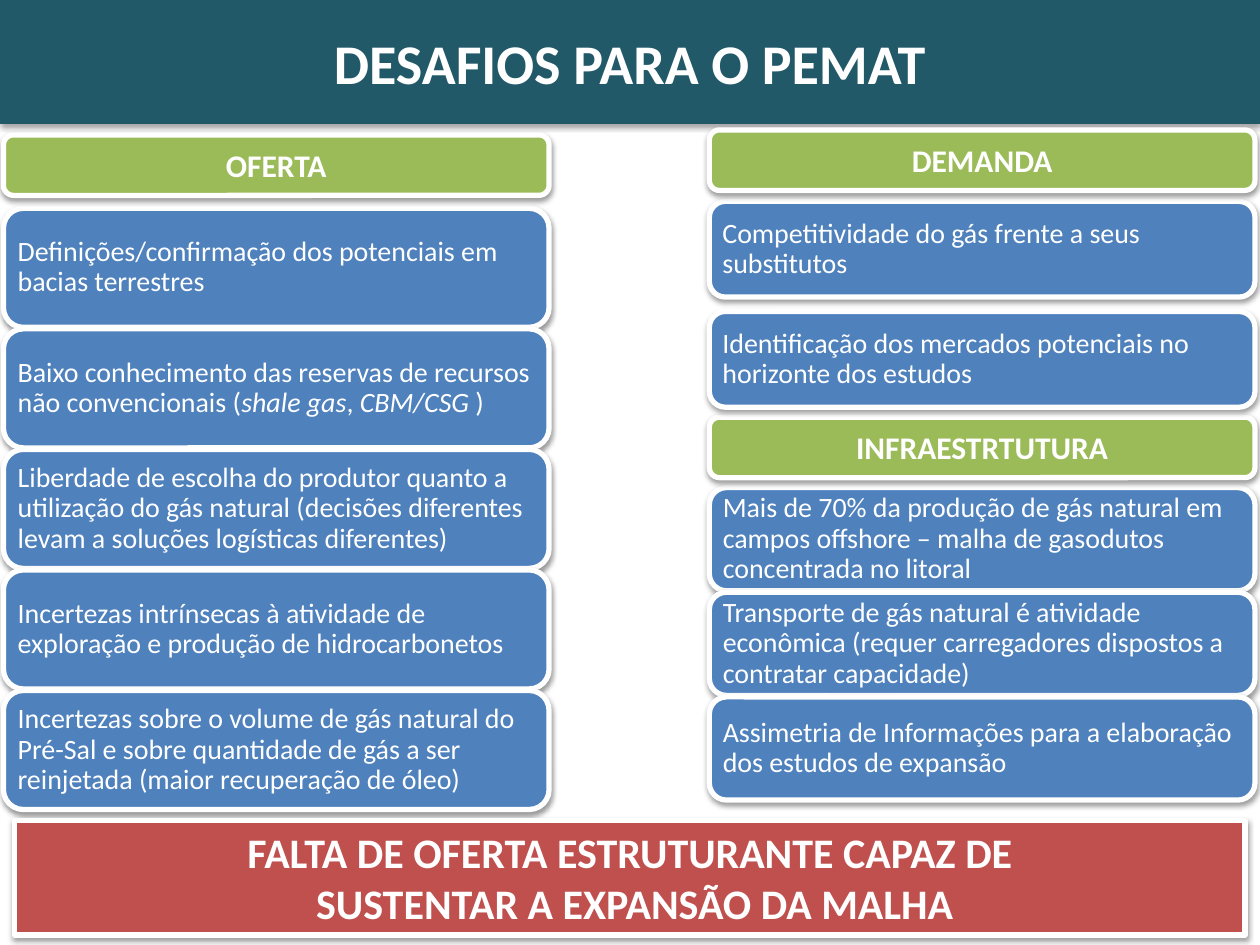
from dataclasses import dataclass

from lxml.etree import SubElement
from pptx import Presentation
from pptx.dml.color import RGBColor
from pptx.enum.shapes import MSO_SHAPE
from pptx.enum.text import MSO_ANCHOR, PP_ALIGN
from pptx.oxml.ns import qn
from pptx.util import Cm, Pt


@dataclass(frozen=True)
class Theme:
    font: str = "Calibri"
    white: str = "FFFFFF"
    teal: str = "215968"
    green: str = "9BBB59"
    blue: str = "4F81BD"
    red: str = "C0504D"
    shadow: str = "000000"
    title_size: int = 32
    conclusion_size: int = 24
    heading_size: int = 18
    card_size: int = 16
    border: int = 3


class SlideBuilder:
    def __init__(self, slide, theme):
        self.slide = slide
        self.theme = theme

    def _box(self, kind, left, top, width, height, fill, border=True):
        box = self.slide.shapes.add_shape(
            kind, Cm(left), Cm(top), Cm(width), Cm(height))
        box.fill.solid()
        box.fill.fore_color.rgb = RGBColor.from_string(fill)
        if border:
            box.line.color.rgb = RGBColor.from_string(self.theme.white)
            box.line.width = Pt(self.theme.border)
        else:
            box.line.fill.background()
        self._drop_shadow(box, 1.6 if border else 1.8, 38 if border else 35)
        box.text_frame.word_wrap = True
        return box

    def _drop_shadow(self, box, distance, opacity):
        box.shadow.inherit = False
        effects = box._element.spPr.find(qn("a:effectLst"))
        outer = SubElement(effects, qn("a:outerShdw"), blurRad=str(Pt(3.1)),
                           dist=str(Pt(distance)), dir="5400000", rotWithShape="0")
        color = SubElement(outer, qn("a:srgbClr"), val=self.theme.shadow)
        SubElement(color, qn("a:alpha"), val=str(opacity * 1000))

    def _format(self, frame, size, bold=False, align=PP_ALIGN.CENTER):
        for paragraph in frame.paragraphs:
            paragraph.alignment = align
            for run in paragraph.runs:
                run.font.name = self.theme.font
                run.font.size = Pt(size)
                run.font.bold = bold
                run.font.color.rgb = RGBColor.from_string(self.theme.white)

    def title(self, text):
        band = self._box(MSO_SHAPE.RECTANGLE, 0, 0, 25.4, 2.5,
                         self.theme.teal, border=False)
        band.text_frame.text = text
        self._format(band.text_frame, self.theme.title_size, bold=True)

    def heading(self, text, left, top, width):
        label = self._box(MSO_SHAPE.ROUNDED_RECTANGLE, left, top, width, 1.22,
                          self.theme.green)
        label.text_frame.text = text
        self._format(label.text_frame, self.theme.heading_size, bold=True)

    def card(self, text, left, top, width, height):
        """Text between asterisks is set in italics."""
        card = self._box(MSO_SHAPE.ROUNDED_RECTANGLE, left, top, width, height,
                         self.theme.blue)
        frame = card.text_frame
        frame.margin_left = frame.margin_right = Cm(0.17)
        frame.margin_top = frame.margin_bottom = Cm(0.17)
        paragraph = frame.paragraphs[0]
        paragraph.line_spacing = 0.9
        for index, part in enumerate(text.split("*")):
            run = paragraph.add_run()
            run.text = part
            run.font.italic = index % 2 == 1
        self._format(frame, self.theme.card_size, align=PP_ALIGN.LEFT)

    def section(self, name, left, heading_top, first_top, height, gap, challenges):
        width = 11
        for index, challenge in enumerate(challenges):
            self.card(challenge, left, first_top + index * (height + gap),
                      width, height)
        self.heading(name, left, heading_top, width)

    def conclusion(self, text):
        banner = self._box(MSO_SHAPE.RECTANGLE, 0.3, 16.54, 24.8, 2.31,
                           self.theme.red)
        banner.text_frame.vertical_anchor = MSO_ANCHOR.TOP
        banner.text_frame.text = text
        self._format(banner.text_frame, self.theme.conclusion_size, bold=True)


LEFT_COLUMN, RIGHT_COLUMN = 0.07, 14.3

SUPPLY = [
    "Definições/confirmação dos potenciais em bacias terrestres",
    "Baixo conhecimento das reservas de recursos não convencionais "
    "(*shale gas*, *CBM/CSG* )",
    "Liberdade de escolha do produtor quanto a utilização do gás natural "
    "(decisões diferentes levam a soluções logísticas diferentes)",
    "Incertezas intrínsecas à atividade de exploração e produção de hidrocarbonetos",
    "Incertezas sobre o volume de gás natural do Pré-Sal e sobre quantidade "
    "de gás a ser reinjetada (maior recuperação de óleo)",
]
DEMAND = [
    "Competitividade do gás frente a seus substitutos",
    "Identificação dos mercados potenciais no horizonte dos estudos",
]
INFRASTRUCTURE = [
    "Mais de 70% da produção de gás natural em campos offshore – malha de "
    "gasodutos concentrada no litoral",
    "Transporte de gás natural é atividade econômica (requer carregadores "
    "dispostos a contratar capacidade)",
    "Assimetria de Informações para a elaboração dos estudos de expansão",
]


def main():
    deck = Presentation()
    deck.slide_width, deck.slide_height = Cm(25.4), Cm(19.05)
    builder = SlideBuilder(deck.slides.add_slide(deck.slide_layouts[6]), Theme())

    # Title band
    builder.title("DESAFIOS PARA O PEMAT")

    # Challenges by area
    builder.section("INFRAESTRTUTURA", RIGHT_COLUMN, 8.41, 9.83, 2.08, 0.03,
                    INFRASTRUCTURE)
    builder.section("OFERTA", LEFT_COLUMN, 2.72, 4.2, 2.4, 0.03, SUPPLY)
    builder.section("DEMANDA", RIGHT_COLUMN, 2.62, 4.06, 1.93, 0.29, DEMAND)

    # Conclusion banner
    builder.conclusion("FALTA DE OFERTA ESTRUTURANTE CAPAZ DE\n"
                       " SUSTENTAR A EXPANSÃO DA MALHA")

    deck.save("out.pptx")


if __name__ == "__main__":
    main()
